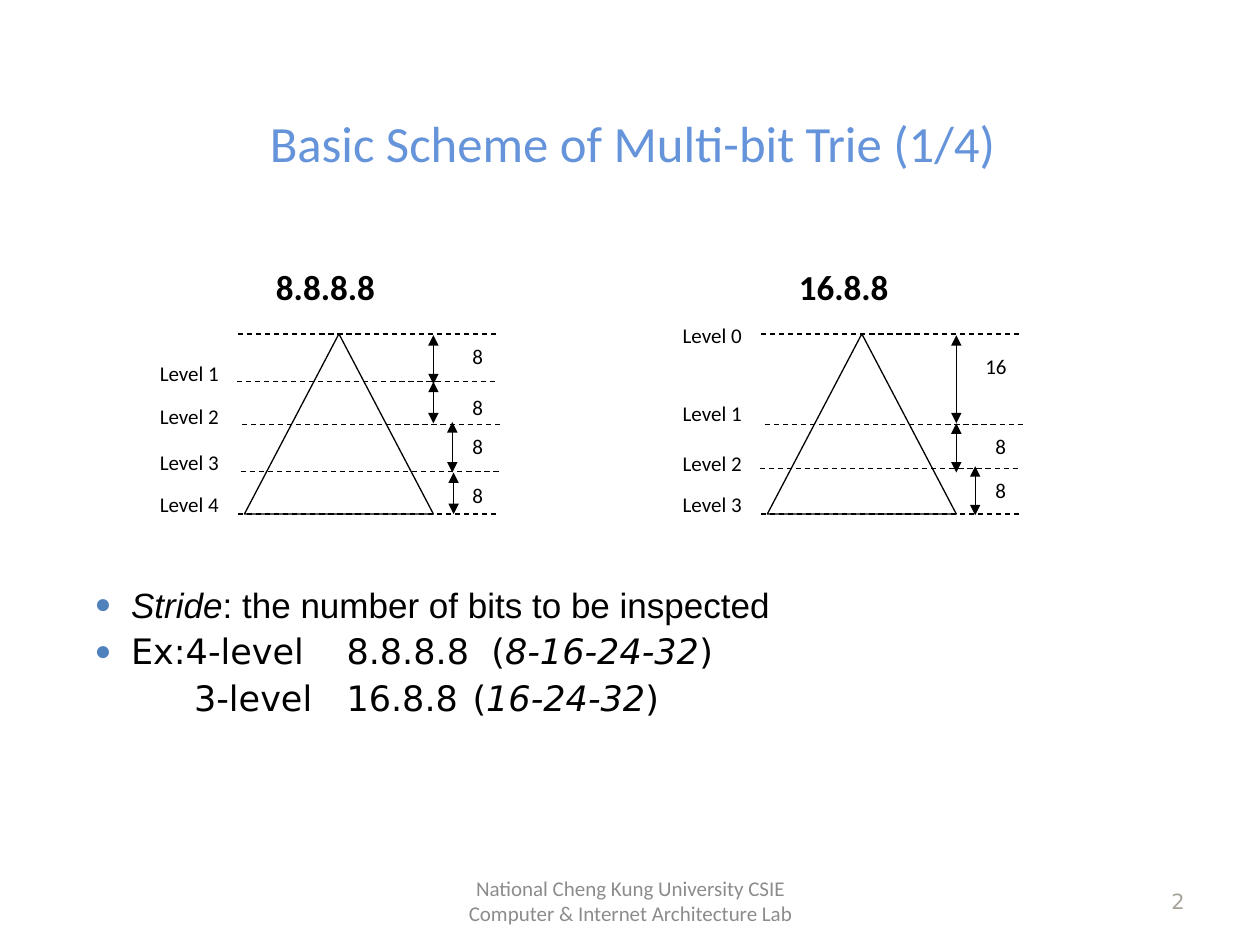
from dataclasses import dataclass

from lxml import etree
from pptx import Presentation
from pptx import util as u
from pptx.dml.color import RGBColor
from pptx.enum import dml, shapes, text
from pptx.oxml.ns import qn

COLORS = {
    "title": "6594DA",
    "ink": "000000",
    "bullet": "4F81BD",
    "footer": "8C8C8C",
    "number": "A7A399",
}
COLUMNS, ROWS = 100, 75
APEX, BASE = 26.5, 40.8

presentation = Presentation()
presentation.slide_width, presentation.slide_height = u.Inches(10), u.Inches(7.5)
COLUMN = presentation.slide_width / COLUMNS
ROW = presentation.slide_height / ROWS


@dataclass
class Guide:
    row: float
    shift: float = -0.5


@dataclass
class Level:
    name: str
    row: float


@dataclass
class Stride:
    bits: str
    column: float
    start: float
    end: float
    label_row: float


@dataclass
class Trie:
    name: str
    left: float
    guides: list[Guide]
    levels: list[Level]
    strides: list[Stride]


def x(columns: float) -> int:
    return round(columns * COLUMN)


def y(rows: float) -> int:
    return round(rows * ROW)


def color(name: str) -> RGBColor:
    return RGBColor.from_string(COLORS[name])


def style(paragraph, size: float, name: str, ink: str = "ink", bold: bool = False) -> None:
    font = paragraph.font
    font.size, font.name, font.bold = u.Pt(size), name, bold
    font.color.rgb = color(ink)


def place(shape, left: float, top: float, width: float, height: float) -> None:
    shape.left, shape.top = x(left), y(top)
    shape.width, shape.height = x(width), y(height)


def add_text(parent, words: str, box: tuple, size: float = 12, name: str = "Calibri",
             ink: str = "ink", bold: bool = False, tight: bool = False,
             align=text.PP_ALIGN.LEFT, anchor=text.MSO_ANCHOR.TOP) -> None:
    left, top, width, height = box
    shape = parent.add_textbox(x(left), y(top), x(width), y(height))
    frame = shape.text_frame
    frame.word_wrap, frame.vertical_anchor = True, anchor
    if tight:
        frame.margin_left = frame.margin_top = 0
    paragraph = frame.paragraphs[0]
    paragraph.text, paragraph.alignment = words, align
    style(paragraph, size, name, ink, bold)


def add_line(parent, start: tuple, end: tuple, arrows: bool = False) -> None:
    line = parent.add_connector(shapes.MSO_CONNECTOR.STRAIGHT,
                                x(start[0]), y(start[1]), x(end[0]), y(end[1]))
    line.line.color.rgb, line.line.width = color("ink"), u.Pt(0.75)
    if arrows:
        outline = line.line._get_or_add_ln()
        for tag in ("a:headEnd", "a:tailEnd"):
            etree.SubElement(outline, qn(tag), type="triangle")
    else:
        line.line.dash_style = dml.MSO_LINE.DASH
    etree.SubElement(line._element.spPr, qn("a:effectLst"))


def add_trie(slide, trie: Trie) -> None:
    parent = slide.shapes.add_group_shape().shapes
    left = trie.left
    triangle = parent.add_shape(shapes.MSO_SHAPE.ISOSCELES_TRIANGLE,
                                x(left), y(APEX), x(15), y(BASE - APEX))
    triangle.shadow.inherit = False
    triangle.fill.background()
    triangle.line.color.rgb, triangle.line.width = color("ink"), u.Pt(0.75)
    add_text(parent, trie.name, (left + 2.5, 21.1, 10.2, 3.9), 20, bold=True, tight=True)
    for guide in trie.guides:
        start = left + guide.shift
        add_line(parent, (start, guide.row), (start + 20.7, guide.row))
    for level in trie.levels:
        add_text(parent, level.name, (left - 7.7, level.row, 8, 3))
    for stride in trie.strides:
        column = left + stride.column
        add_line(parent, (column, stride.start), (column, stride.end), arrows=True)
        label_left = left + 18.9 - 0.8 * len(stride.bits)
        add_text(parent, stride.bits, (label_left, stride.label_row, 4, 2.7), tight=True)


def indent(paragraph, margin: float, first: float, tabs: tuple, bullet: bool) -> None:
    properties = paragraph._p.get_or_add_pPr()
    properties.set("marL", str(u.Inches(margin)))
    properties.set("indent", str(u.Inches(first)))
    if bullet:
        tint = etree.SubElement(properties, qn("a:buClr"))
        etree.SubElement(tint, qn("a:srgbClr"), val=COLORS["bullet"])
        etree.SubElement(properties, qn("a:buSzPct"), val="80000")
        etree.SubElement(properties, qn("a:buChar"), char="●")
    else:
        etree.SubElement(properties, qn("a:buNone"))
    if tabs:
        stops = etree.SubElement(properties, qn("a:tabLst"))
        for stop in tabs:
            etree.SubElement(stops, qn("a:tab"), pos=str(u.Inches(stop)), algn="l")


def fill_body(body) -> None:
    place(body, 5.5, 45.3, 89.5, 20)
    frame = body.text_frame
    frame.margin_left, frame.margin_top = u.Inches(0.2), u.Inches(0.1)
    items = [
        (("", "Stride", ": the number of bits to be inspected"), "Arial", 0.29, -0.29, (), True),
        (("Ex:4-level\t8.8.8.8\t(", "8-16-24-32", ")"), "DejaVu Sans",
         0.29, -0.29, (2, 3.15), True),
        (("3-level\t16.8.8\t(", "16-24-32", ")"), "DejaVu Sans",
         0, 0.79, (1.79, 3.06), False),
    ]
    for index, (pieces, name, margin, first, tabs, bullet) in enumerate(items):
        paragraph = frame.add_paragraph() if index else frame.paragraphs[0]
        paragraph.space_before = u.Pt(2.5)
        style(paragraph, 20, name)
        indent(paragraph, margin, first, tabs, bullet)
        for position, piece in enumerate(pieces):
            if piece:
                run = paragraph.add_run()
                run.text = piece
                if position == 1:
                    run.font.italic = True


TRIES = [
    Trie("16.8.8", 60.9,
         [Guide(APEX), Guide(33.7, -0.2), Guide(37.2, -0.6), Guide(BASE)],
         [Level("Level 0", 25.1), Level("Level 1", 31.3),
          Level("Level 2", 35.3), Level("Level 3", 38.5)],
         [Stride("16", 15, 26.6, 33.6, 28.1), Stride("8", 15, 33.6, 37.5, 34.4),
          Stride("8", 16.5, 37, 40.9, 37.9)]),
    Trie("8.8.8.8", 19.4,
         [Guide(APEX), Guide(30.3, -0.6), Guide(33.7, -0.2), Guide(37.4, -0.3), Guide(BASE)],
         [Level("Level 1", 28.1), Level("Level 2", 31.5),
          Level("Level 3", 35.2), Level("Level 4", 38.5)],
         [Stride("8", 15, 26.6, 30.5, 27.3), Stride("8", 15, 30.3, 33.6, 31.3),
          Stride("8", 16.5, 33.5, 37.5, 34.4), Stride("8", 16.6, 37.5, 40.8, 38.3)]),
]


def main() -> None:
    slide = presentation.slides.add_slide(presentation.slide_layouts[1])
    title, body = slide.placeholders
    place(title, 5.5, 5.5, 89.5, 11.5)
    title.text_frame.text = "Basic Scheme of Multi-bit Trie (1/4)"
    title.text_frame.vertical_anchor = text.MSO_ANCHOR.MIDDLE
    heading = title.text_frame.paragraphs[0]
    heading.alignment = text.PP_ALIGN.CENTER
    style(heading, 29, "Calibri", "title")
    fill_body(body)
    add_text(slide.shapes,
             "National Cheng Kung University CSIE Computer & Internet Architecture Lab",
             (34.2, 69.5, 31.7, 4), ink="footer",
             align=text.PP_ALIGN.CENTER, anchor=text.MSO_ANCHOR.MIDDLE)
    add_text(slide.shapes, "2", (71.7, 69.5, 23.3, 4), name="DejaVu Sans", ink="number",
             align=text.PP_ALIGN.RIGHT, anchor=text.MSO_ANCHOR.MIDDLE)
    for trie in TRIES:
        add_trie(slide, trie)
    presentation.save("out.pptx")


if __name__ == "__main__":
    main()
